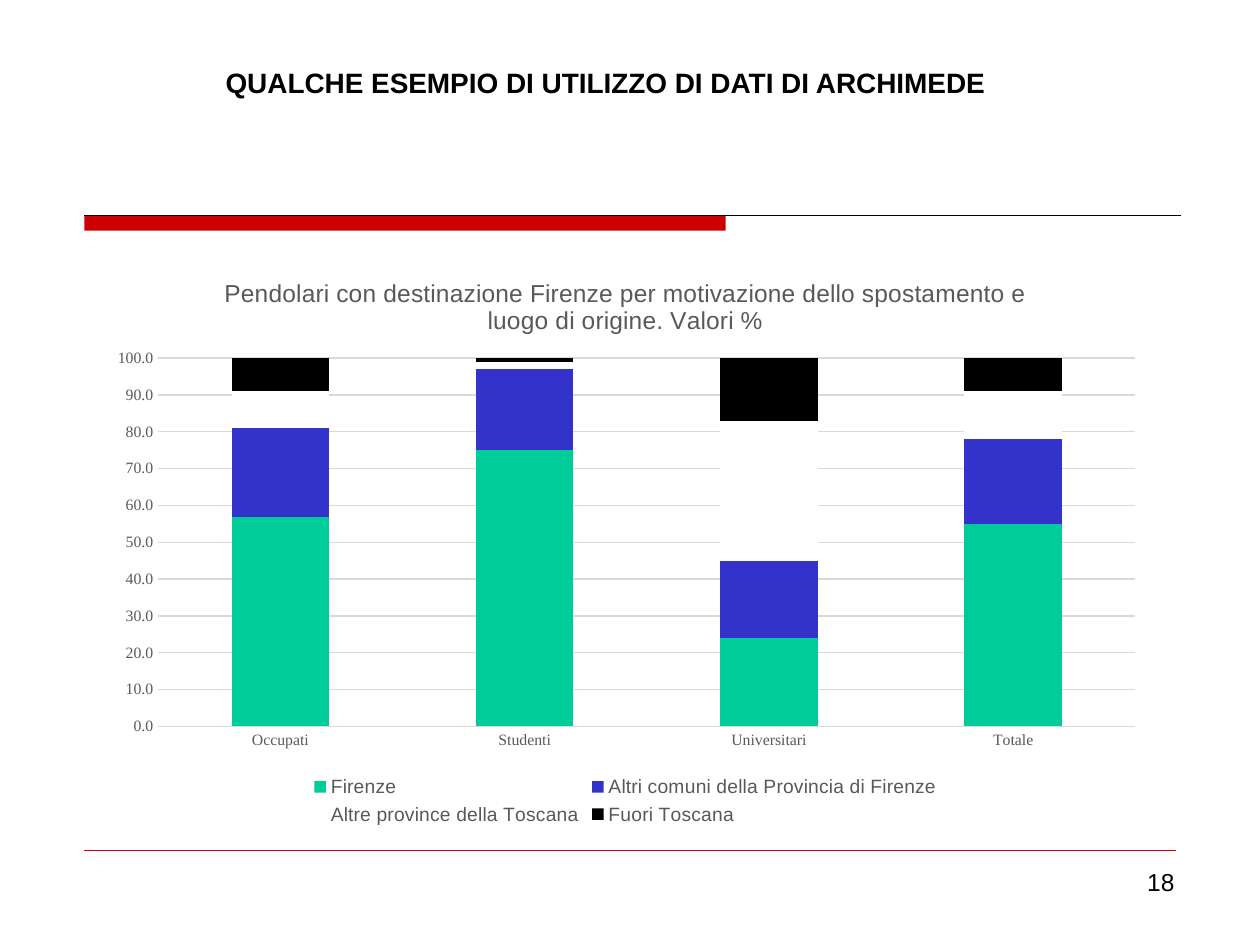
from lxml import etree
from pptx import Presentation
from pptx import util as u
from pptx.chart.data import CategoryChartData
from pptx.dml.color import RGBColor
from pptx.enum import chart as charts, shapes, text
from pptx.oxml import parse_xml
from pptx.oxml.ns import nsdecls, qn

COLORS = {
    "red": "CC0000",
    "black": "000000",
    "gray": "595959",
    "grid": "D9D9D9",
    "green": "00CC99",
    "blue": "3333CC",
    "white": "FFFFFF",
}
CATEGORIES = ["Occupati", "Studenti", "Universitari", "Totale"]
ORIGINS = [
    ("Firenze", [57, 75, 24, 55], "green"),
    ("Altri comuni della Provincia di Firenze", [24, 22, 21, 23], "blue"),
    ("Altre province della Toscana", [10, 2, 38, 13], "white"),
    ("Fuori Toscana", [9, 1, 17, 9], "black"),
]


def rgb(name):
    return RGBColor.from_string(COLORS[name])


def box(left, top, width, height):
    return [u.Inches(value) for value in (left, top, width, height)]


class SlideBuilder:
    def __init__(self, slide, font="Arial", axis_font="Times New Roman"):
        self.slide = slide
        self.font = font
        self.axis_font = axis_font

    def style(self, font, size, color, bold=False, name=None):
        font.name = name or self.font
        font.size = u.Pt(size)
        font.bold = bold
        font.color.rgb = rgb(color)

    def add_text(self, frame, words, size, align, bold=False):
        paragraph = frame.paragraphs[0]
        paragraph.alignment = align
        run = paragraph.add_run()
        run.text = words
        self.style(run.font, size, "black", bold)

    def title(self, words, place):
        shape = self.slide.shapes.title
        shape.left, shape.top, shape.width, shape.height = box(*place)
        frame = shape.text_frame
        frame.word_wrap = False
        frame.auto_size = text.MSO_AUTO_SIZE.NONE
        frame.vertical_anchor = text.MSO_ANCHOR.TOP
        self.add_text(frame, words, 16, text.PP_ALIGN.LEFT, bold=True)

    def text_box(self, words, place, size, align):
        frame = self.slide.shapes.add_textbox(*box(*place)).text_frame
        frame.word_wrap = True
        self.add_text(frame, words, size, align)

    def bar(self, place, color):
        shape = self.slide.shapes.add_shape(shapes.MSO_SHAPE.RECTANGLE, *box(*place))
        shape.shadow.inherit = False
        shape.fill.solid()
        shape.fill.fore_color.rgb = rgb(color)
        shape.line.fill.background()

    def rule(self, left, right, top, color, width):
        line = self.slide.shapes.add_connector(
            shapes.MSO_CONNECTOR.STRAIGHT, *box(left, top, right, top))
        line.line.color.rgb = rgb(color)
        line.line.width = u.Pt(width)
        etree.SubElement(line._element.spPr, qn("a:effectLst"))

    def stacked_chart(self, title, categories, series, place):
        data = CategoryChartData(number_format="0.0")
        data.categories = categories
        for name, values, _ in series:
            data.add_series(name, values)
        chart = self.slide.shapes.add_chart(
            charts.XL_CHART_TYPE.COLUMN_STACKED, *box(*place), data).chart
        self.style(chart.font, 10, "black", name=self.axis_font)

        chart.has_title = True
        run = chart.chart_title.text_frame.paragraphs[0].add_run()
        run.text = title
        self.style(run.font, 14, "gray")

        chart.has_legend = True
        chart.legend.position = charts.XL_LEGEND_POSITION.BOTTOM
        chart.legend.include_in_layout = False
        self.style(chart.legend.font, 11, "gray")

        plot = chart.plots[0]
        plot.gap_width = 150
        plot.overlap = 100
        plot.vary_by_categories = False
        for plotted, (_, _, color) in zip(plot.series, series):
            plotted.format.fill.solid()
            plotted.format.fill.fore_color.rgb = rgb(color)
        self.axes(chart)
        self.plot_layout(chart, x=0.06, y=0.18, w=0.92, h=0.64)

    def axes(self, chart):
        for axis in (chart.category_axis, chart.value_axis):
            axis.major_tick_mark = charts.XL_TICK_MARK.NONE
            axis.minor_tick_mark = charts.XL_TICK_MARK.NONE
            self.style(axis.tick_labels.font, 9, "gray", name=self.axis_font)
        values = chart.value_axis
        values.minimum_scale, values.maximum_scale, values.major_unit = 0, 100, 10
        values.has_major_gridlines = True
        values.tick_labels.number_format = "0.0"
        values.tick_labels.number_format_is_linked = False
        values.format.line.fill.background()
        for line in (chart.category_axis.format.line, values.major_gridlines.format.line):
            line.color.rgb = rgb("grid")
            line.width = u.Pt(0.75)

    def plot_layout(self, chart, **fractions):
        """Fix the inner plot area as fractions of the chart."""
        modes = "".join(f'<c:{key}Mode val="edge"/>' for key in "xy")
        sizes = "".join(f'<c:{key} val="{value}"/>' for key, value in fractions.items())
        area = chart._chartSpace.chart.plotArea
        for old in area.findall(qn("c:layout")):
            area.remove(old)
        area.insert(0, parse_xml(
            f'<c:layout {nsdecls("c")}><c:manualLayout><c:layoutTarget val="inner"/>'
            f'{modes}{sizes}</c:manualLayout></c:layout>'))


def main():
    presentation = Presentation()
    presentation.slide_width, presentation.slide_height = u.Inches(10), u.Inches(7.5)
    title_only = presentation.slide_layouts[5]
    builder = SlideBuilder(presentation.slides.add_slide(title_only))

    builder.bar((0.67, 1.71, 5.09, 0.12), "red")
    builder.rule(0.67, 9.37, 1.71, "black", 0.75)
    builder.rule(0.67, 9.33, 6.75, "red", 0.25)
    builder.title("QUALCHE ESEMPIO DI UTILIZZO DI DATI DI ARCHIMEDE", (1.69, 0.47, 6.31, 0.37))
    builder.text_box("18", (7.91, 6.83, 1.51, 0.52), 14, text.PP_ALIGN.RIGHT)
    builder.stacked_chart(
        "Pendolari con destinazione Firenze per motivazione dello spostamento "
        "e luogo di origine. Valori %",
        CATEGORIES, ORIGINS, (0.75, 2.02, 8.43, 4.57))
    presentation.save("out.pptx")


if __name__ == "__main__":
    main()
